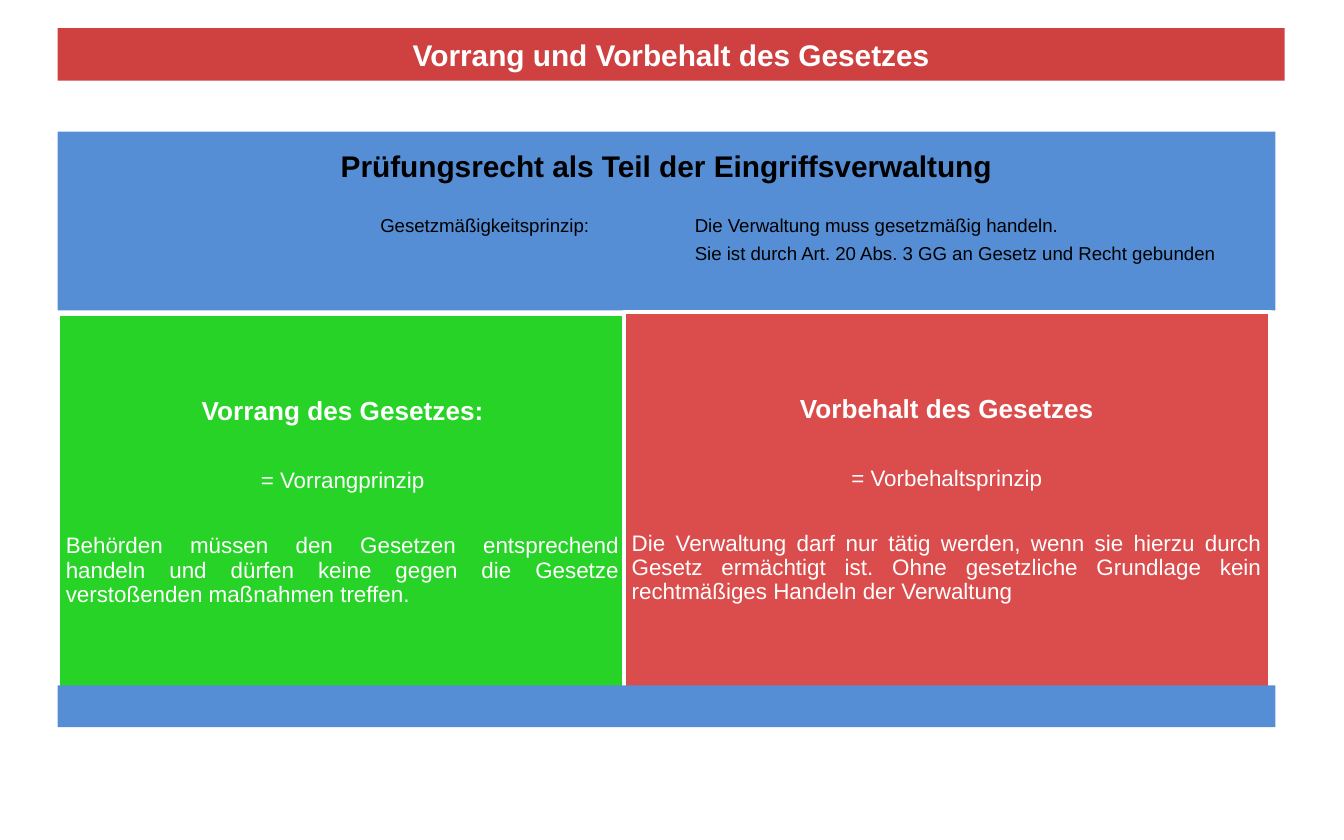
from dataclasses import dataclass
from typing import Optional

from lxml.etree import SubElement
from pptx import Presentation
from pptx.dml.color import RGBColor
from pptx.enum.shapes import MSO_SHAPE as Shape
from pptx.enum.text import MSO_ANCHOR as Anchor, PP_ALIGN as Align
from pptx.oxml.ns import qn
from pptx.util import Inches, Pt

COLS, ROWS = 1000, 625
COLORS = {
    "white": "FFFFFF",
    "black": "000000",
    "title": "C00000",
    "frame": "558ED5",
    "green": "00CC00",
    "red": "CC0000",
}

prs = Presentation()
prs.slide_width, prs.slide_height = Inches(10), Inches(6.25)


@dataclass
class Line:
    text: str
    size: float
    bold: bool = False
    align: Align = Align.CENTER
    after: float = 0
    spacing: float = 0.9
    tabs: tuple[float, ...] = ()


@dataclass
class Block:
    col: int
    row: int
    cols: int
    rows: int
    fill: str
    alpha: int = 100
    border: Optional[str] = None
    ink: str = "white"
    anchor: Anchor = Anchor.MIDDLE
    inset: float = 0.06
    top: float = 0.06
    lines: tuple[Line, ...] = ()


def rgb(name: str) -> RGBColor:
    return RGBColor.from_string(COLORS[name])


def add_tabs(p, tabs: tuple[float, ...]) -> None:
    tab_list = SubElement(p._p.get_or_add_pPr(), qn("a:tabLst"))
    for tab in tabs:
        SubElement(tab_list, qn("a:tab"), pos=str(Inches(tab)), algn="l")


def write_lines(tf, block: Block) -> None:
    tf.word_wrap = True
    tf.vertical_anchor = block.anchor
    tf.margin_left = tf.margin_right = tf.margin_bottom = Inches(block.inset)
    tf.margin_top = Inches(block.top)
    for i, line in enumerate(block.lines):
        p = tf.add_paragraph() if i else tf.paragraphs[0]
        p.text = line.text
        p.alignment = line.align
        p.line_spacing = line.spacing
        p.space_after = Pt(line.after)
        if line.tabs:
            add_tabs(p, line.tabs)
        p.font.name = "Arial"
        p.font.size = Pt(line.size)
        p.font.bold = line.bold
        p.font.color.rgb = rgb(block.ink)


def draw_block(s, block: Block) -> None:
    x, y = prs.slide_width // COLS, prs.slide_height // ROWS
    sp = s.shapes.add_shape(Shape.RECTANGLE, block.col * x, block.row * y,
                            block.cols * x, block.rows * y)
    sp.shadow.inherit = False
    sp.fill.solid()
    sp.fill.fore_color.rgb = rgb(block.fill)
    if block.alpha < 100:
        color = sp._element.spPr.find(qn("a:solidFill")).find(qn("a:srgbClr"))
        SubElement(color, qn("a:alpha"), val=str(block.alpha * 1000))
    if block.border:
        sp.line.color.rgb = rgb(block.border)
        sp.line.width = Pt(2)
    else:
        sp.line.fill.background()
    if block.lines:
        write_lines(sp.text_frame, block)


def panel(col: int, row: int, cols: int, fill: str, alpha: int,
          heading: str, principle: str, body: str) -> Block:
    return Block(col, row, cols, 280, fill, alpha, border="white", lines=(
        Line(heading, 14, bold=True, after=23),
        Line(principle, 12, after=22),
        Line(body, 12, align=Align.JUSTIFY),
    ))


LEFT, WIDTH = 43, 906
TABS = (2.33, 4.67)
BLOCKS = (
    Block(LEFT, 21, 913, 39, "title", 75, lines=(
        Line("Vorrang und Vorbehalt des Gesetzes", 16, bold=True, spacing=1),
    )),
    Block(LEFT, 98, WIDTH, 133, "frame", ink="black", anchor=Anchor.TOP,
          inset=0.07, top=0.15, lines=(
        Line("Prüfungsrecht als Teil der Eingriffsverwaltung", 16, bold=True, after=17.5),
        Line("\tGesetzmäßigkeitsprinzip: \tDie Verwaltung muss gesetzmäßig handeln.",
             10, align=Align.LEFT, after=4, tabs=TABS),
        Line("\t\tSie ist durch Art. 20 Abs. 3 GG an Gesetz und Recht gebunden",
             10, align=Align.LEFT, tabs=TABS),
    )),
    panel(LEFT, 234, 424, "green", 85, "Vorrang des Gesetzes:", "= Vorrangprinzip",
          "Behörden müssen den Gesetzen entsprechend handeln und dürfen keine "
          "gegen die Gesetze verstoßenden maßnahmen treffen."),
    panel(464, 232, 481, "red", 70, "Vorbehalt des Gesetzes", "= Vorbehaltsprinzip",
          "Die Verwaltung darf nur tätig werden, wenn sie hierzu durch Gesetz "
          "ermächtigt ist. Ohne gesetzliche Grundlage kein rechtmäßiges Handeln "
          "der Verwaltung"),
    Block(LEFT, 510, WIDTH, 31, "frame"),
)

s = prs.slides.add_slide(prs.slide_layouts[6])
for block in BLOCKS:
    draw_block(s, block)
prs.save("out.pptx")
